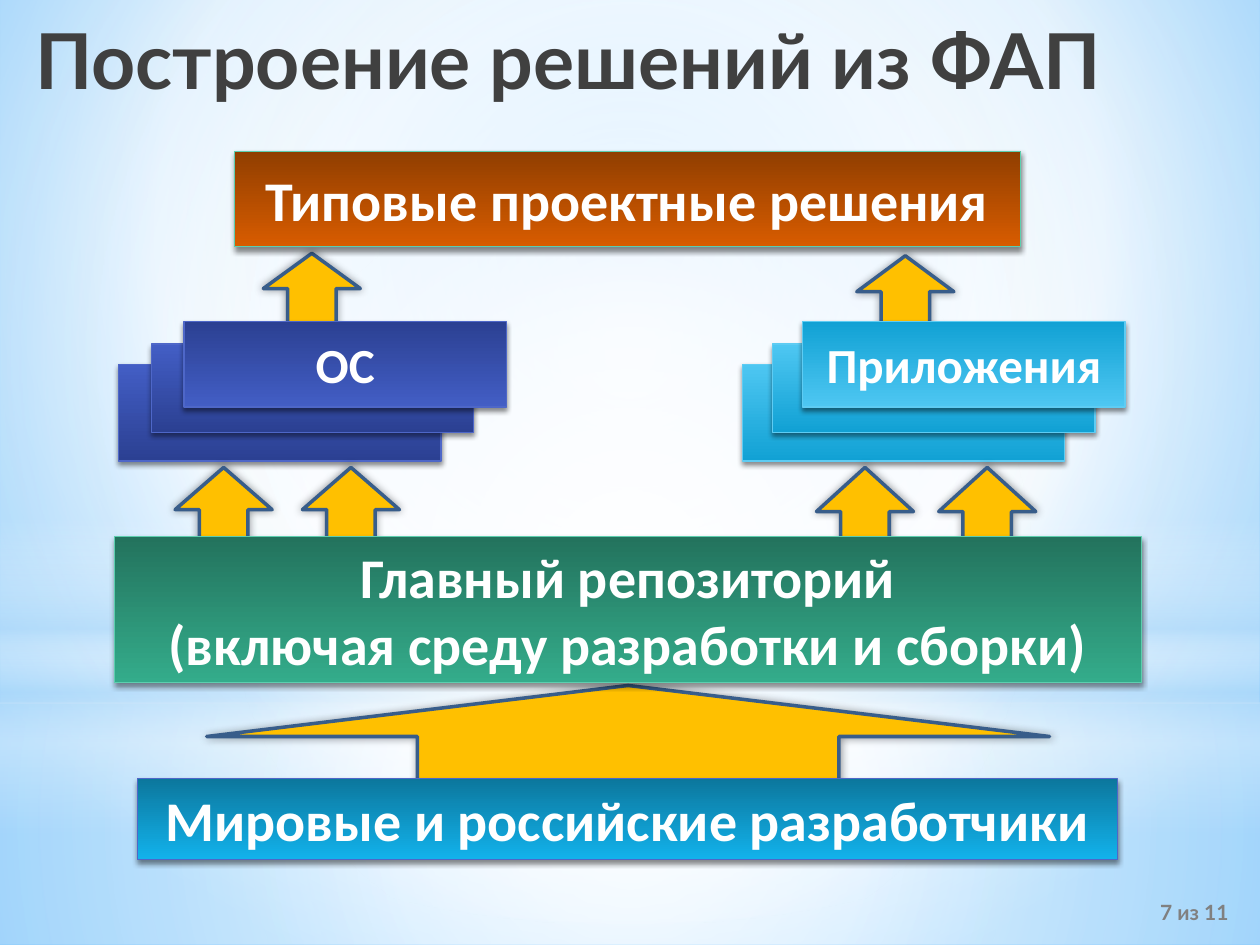
from lxml import etree
from pptx import Presentation
from pptx.dml.color import RGBColor
from pptx.enum.shapes import MSO_SHAPE
from pptx.enum.text import MSO_ANCHOR, PP_ALIGN
from pptx.oxml.ns import qn
from pptx.util import Inches, Pt

RECTANGLE, ELLIPSE, ARROW = MSO_SHAPE.RECTANGLE, MSO_SHAPE.OVAL, MSO_SHAPE.DOWN_ARROW
LEFT, CENTER, RIGHT = PP_ALIGN.LEFT, PP_ALIGN.CENTER, PP_ALIGN.RIGHT
TOP, MIDDLE = MSO_ANCHOR.TOP, MSO_ANCHOR.MIDDLE

TITLE = "Построение решений из ФАП"
PAGE_NUMBER = "7 из 11"
TITLE_AREA = (1.8, 1.3, 96.3, 12.5)
NUMBER_AREA = (78.5, 70.4, 20, 4)

BACKDROP = [(0, "9ED5FF", 100), (60, "FFFFFF", 100), (100, "5BB9FF", 100)]
BACKDROP_FOCUS = (20, 10, 20, 60)
CENTER_FOCUS = (50, 50, 50, 50)
GLOWS = [
    (RECTANGLE, (0, 55.8, 100, 19.2), CENTER_FOCUS,
     [(0, "FFFFFF", 91), (37, "FFFFFF", 76), (100, "B4DCFA", 79)]),
    (RECTANGLE, (0, 0, 100, 55.8), CENTER_FOCUS,
     [(0, "FFFFFF", 89), (48, "FFFFFF", 62), (100, "B4DCFA", 79)]),
    (RECTANGLE, (0, 41.2, 100, 25), None,
     [(0, "FFFFFF", 0), (29, "FFFFFF", 30), (45, "B4DCFA", 40),
      (55, "FFFFFF", 26), (65, "B4DCFA", 60), (100, "FFFFFF", 0)]),
    (ELLIPSE, (0, 17.5, 100, 55.8), CENTER_FOCUS,
     [(0, "FFFFFF", 100), (56, "FFFFFF", 0)]),
]

BARS = [
    (["Типовые проектные решения"], (18.6, 12, 62.4, 7.6), ("D85C00", "903E00", "5DCEAF")),
    (["Главный репозиторий", "(включая среду разработки и сборки)"],
     (9.1, 42.6, 81.5, 11.6), ("34AC8B", "23735D", "5DCEAF")),
    (["Мировые и российские разработчики"], (10.9, 61.8, 77.8, 6.4),
     ("12B2EB", "0C779D", "4E67C8")),
]
STACKS = [
    ("ОС", 9.4, 2.6, ("435EC5", "2B4092", "4E67C8")),
    ("Приложения", 58.9, 2.4, ("4EC7F2", "11A1D4", "5ECCF3")),
]
CARD_WIDTH = 25.6
CARD_ROWS = [(28.9, 7.7), (27.3, 7), (25.5, 6.8)]
ARROWS = [
    (74.5, 37.1, 7.7, 7), (64.8, 37.1, 7.7, 7),
    (13.9, 37.1, 7.7, 6.7), (24, 37.1, 7.7, 6.7),
    (20.9, 20.1, 7.7, 5.6), (68, 20.3, 7.7, 5.7),
    (16.4, 54.4, 66.9, 8.1),
]
BAR_SHADOW = (45, 3.1, 1.8, 90)
ARROW_SHADOW = (40, 5, 0, 0)

deck = Presentation()
deck.slide_width, deck.slide_height = Inches(10), Inches(7.5)
COLUMN, ROW = deck.slide_width / 100, deck.slide_height / 75
page = deck.slides.add_slide(deck.slide_layouts[5])


def color(value):
    return RGBColor.from_string(value)


def place(area):
    left, top, width, height = area
    return [int(size) for size in (left * COLUMN, top * ROW, width * COLUMN, height * ROW)]


def add_color(parent, value, alpha):
    node = etree.SubElement(parent, qn("a:srgbClr"), val=value)
    etree.SubElement(node, qn("a:alpha"), val=str(alpha * 1000))


def set_gradient(fill, properties, stops, focus=None):
    fill.solid()
    gradient = etree.Element(qn("a:gradFill"), rotWithShape="1")
    stop_list = etree.SubElement(gradient, qn("a:gsLst"))
    for position, value, alpha in stops:
        stop = etree.SubElement(stop_list, qn("a:gs"), pos=str(position * 1000))
        add_color(stop, value, alpha)
    if focus:
        circle = etree.SubElement(gradient, qn("a:path"), {"path": "circle"})
        sides = {side: str(share * 1000) for side, share in zip("ltrb", focus)}
        etree.SubElement(circle, qn("a:fillToRect"), sides)
    else:
        etree.SubElement(gradient, qn("a:lin"), ang="16200000", scaled="0")
    properties.replace(properties.find(qn("a:solidFill")), gradient)


def set_shadow(shape, alpha, blur, distance, angle):
    shape.shadow.inherit = False
    effects = shape.element.spPr.find(qn("a:effectLst"))
    shadow = etree.SubElement(
        effects, qn("a:outerShdw"), blurRad=str(Pt(blur)), dist=str(Pt(distance)),
        dir=str(angle * 60000), rotWithShape="0")
    add_color(shadow, "000000", alpha)


def set_line(shape, value, width):
    shape.line.color.rgb = color(value)
    shape.line.width = Pt(width)


def write(shape, lines, size, font, value, align, anchor):
    frame = shape.text_frame
    frame.word_wrap = True
    frame.vertical_anchor = anchor
    frame.text = "\n".join(lines)
    look = {"size": Pt(size), "name": font, "bold": True}
    for para in frame.paragraphs:
        para.alignment = align
        for span in para.runs:
            span.font.color.rgb = color(value)
            for name, setting in look.items():
                setattr(span.font, name, setting)


def add_box(area, colors, lines=(), size=32, rotation=0):
    box = page.shapes.add_shape(RECTANGLE, *place(area))
    start, end, edge = colors
    set_gradient(box.fill, box.element.spPr, [(0, start, 100), (100, end, 100)])
    set_line(box, edge, 0.75)
    set_shadow(box, *BAR_SHADOW)
    box.rotation = rotation
    if lines:
        frame = box.text_frame
        frame.margin_left = frame.margin_right = Inches(0.11)
        frame.margin_top = frame.margin_bottom = Inches(0.06)
        write(box, lines, size, "Calibri", "FFFFFF", CENTER, MIDDLE)


def add_card(stack, level):
    label, left, step, colors = stack
    top, height = CARD_ROWS[level]
    front = level == len(CARD_ROWS) - 1
    add_box((left + level * step, top, CARD_WIDTH, height), colors,
            [label] if front else [], 28, 0 if front else 180)


backdrop_fill = page.background.fill
backdrop_fill.solid()
set_gradient(backdrop_fill, page.element.xpath(".//p:bgPr")[0], BACKDROP, BACKDROP_FOCUS)

for kind, area, focus, stops in GLOWS:
    glow = page.shapes.add_shape(kind, *place(area))
    set_gradient(glow.fill, glow.element.spPr, stops, focus)
    glow.line.fill.background()
    glow.shadow.inherit = False

for level in range(len(CARD_ROWS) - 1):
    for stack in STACKS:
        add_card(stack, level)

for area in ARROWS:
    arrow = page.shapes.add_shape(ARROW, *place(area))
    arrow.rotation = 180
    arrow.fill.solid()
    arrow.fill.fore_color.rgb = color("FFC000")
    set_line(arrow, "385D8A", 2)
    set_shadow(arrow, *ARROW_SHADOW)

for lines, area, colors in BARS:
    add_box(area, colors, lines)

for stack in STACKS:
    add_card(stack, len(CARD_ROWS) - 1)

title = page.shapes.title
title.left, title.top, title.width, title.height = place(TITLE_AREA)
write(title, [TITLE], 44, "Lato", "404040", LEFT, TOP)
title.text_frame.paragraphs[0].line_spacing = 0.9
title.element.getparent().append(title.element)

number = page.shapes.add_textbox(*place(NUMBER_AREA))
write(number, [PAGE_NUMBER], 12, "Lato", "808080", RIGHT, MIDDLE)

deck.save("out.pptx")
